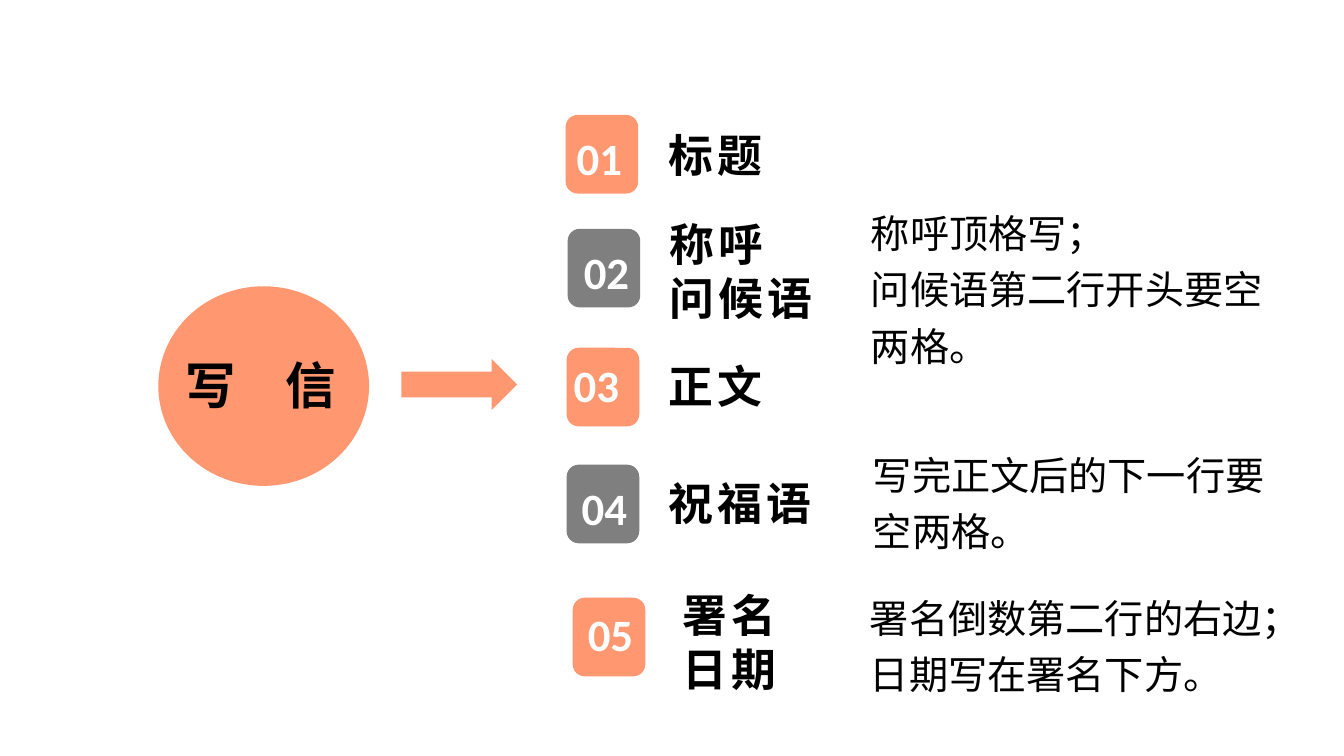
from pptx import Presentation
from pptx.dml.color import RGBColor
from pptx.enum.shapes import MSO_SHAPE as Shape
from pptx.enum.text import MSO_ANCHOR as Anchor, MSO_AUTO_SIZE as AutoSize, PP_ALIGN as Align
from pptx.oxml.ns import qn
from pptx.util import Pt

PX = 9144  # EMU per px, 100 px to the inch
CORAL = RGBColor(0xFF, 0x97, 0x70)
GRAY = RGBColor(0x7F, 0x7F, 0x7F)
BLACK = RGBColor(0, 0, 0)
WHITE = RGBColor(0xFF, 0xFF, 0xFF)
LATIN_FONT = "Calibri"
CHINESE_FONT = "Noto Sans CJK SC"

BADGE_SIZE = (72, 78)
NUMBER_SIZE = (65, 64)

# badge place, number place, label box, label font, label text
PARTS = [
    ((561, 114), (562, 125), (653, 122, 170, 63), CHINESE_FONT, "标题"),
    ((563, 227), (569, 238), (654, 210, 274, 117), LATIN_FONT, "称呼\n问候语"),
    ((562, 345), (559, 350), (653, 351, 224, 63), CHINESE_FONT, "正文"),
    ((562, 461), (567, 472), (653, 467, 181, 63), LATIN_FONT, "祝福语"),
    ((568, 593), (573, 597), (667, 578, 224, 117), CHINESE_FONT, "署名\n日期"),
]

RULES = [
    ((854, 193, 445, 178), "称呼顶格写；\n问候语第二行开头要空两格。"),
    ((856, 433, 433, 122), "写完正文后的下一行要空两格。"),
    ((853, 575, 428, 122), "署名倒数第二行的右边；\n日期写在署名下方。"),
]


def to_emu(box):
    return [length * PX for length in box]


def add_filled_shape(shapes, kind, box, color):
    shape = shapes.add_shape(kind, *to_emu(box))
    shape.shadow.inherit = False
    shape.fill.solid()
    shape.fill.fore_color.rgb = color
    shape.line.fill.background()


def write_text(shape, text, size, font_name, color=BLACK, bold=True,
               align=Align.LEFT, spacing=0, line_spacing=1.0, wrap=True):
    frame = shape.text_frame
    frame.text = text
    frame.word_wrap = wrap
    frame.auto_size = AutoSize.NONE
    frame.vertical_anchor = Anchor.TOP
    for paragraph in frame.paragraphs:
        paragraph.alignment = align
        paragraph.line_spacing = line_spacing
        for run in paragraph.runs:
            font = run.font
            font.size, font.bold, font.name = Pt(size), bold, font_name
            font.color.rgb = color
            properties = run._r.get_or_add_rPr()
            properties.set("lang", "zh-CN")
            if spacing:
                properties.set("spc", str(spacing * 100))
            # East Asian face, placed right after the Latin one
            east_asian = properties.makeelement(qn("a:ea"), {"typeface": LATIN_FONT})
            properties.find(qn("a:latin")).addnext(east_asian)


def add_text(shapes, box, text, size, font_name, **style):
    write_text(shapes.add_textbox(*to_emu(box)), text, size, font_name, **style)


def add_topic(slide):
    add_filled_shape(slide.shapes, Shape.OVAL, (157, 284, 209, 198), CORAL)
    title = slide.shapes.title
    title.left, title.top, title.width, title.height = to_emu((145, 346, 227, 71))
    write_text(title, "写　信", 36, LATIN_FONT, align=Align.CENTER)
    slide.shapes._spTree.append(title._element)  # bring in front of the circle


def add_part(slide, index, part):
    badge, number, label_box, label_font, label = part
    shapes = slide.shapes.add_group_shape().shapes
    add_text(shapes, label_box, label, 32, label_font, spacing=3)
    add_filled_shape(shapes, Shape.ROUNDED_RECTANGLE, badge + BADGE_SIZE,
                     GRAY if index % 2 == 0 else CORAL)
    add_text(shapes, number + NUMBER_SIZE, f"{index:02d}", 32, LATIN_FONT,
             color=WHITE, align=Align.CENTER, wrap=False)


def main():
    presentation = Presentation()
    presentation.slide_width, presentation.slide_height = to_emu((1333, 750))
    slide = presentation.slides.add_slide(presentation.slide_layouts[5])

    # Topic and arrow
    add_topic(slide)
    add_filled_shape(slide.shapes, Shape.RIGHT_ARROW, (398, 356, 115, 51), CORAL)

    # Numbered parts of a letter
    for index, part in enumerate(PARTS, start=1):
        add_part(slide, index, part)

    # Layout rules on the right
    for box, text in RULES:
        add_text(slide.shapes, box, text, 28, CHINESE_FONT, bold=False, line_spacing=1.2)

    presentation.save("out.pptx")


if __name__ == "__main__":
    main()
